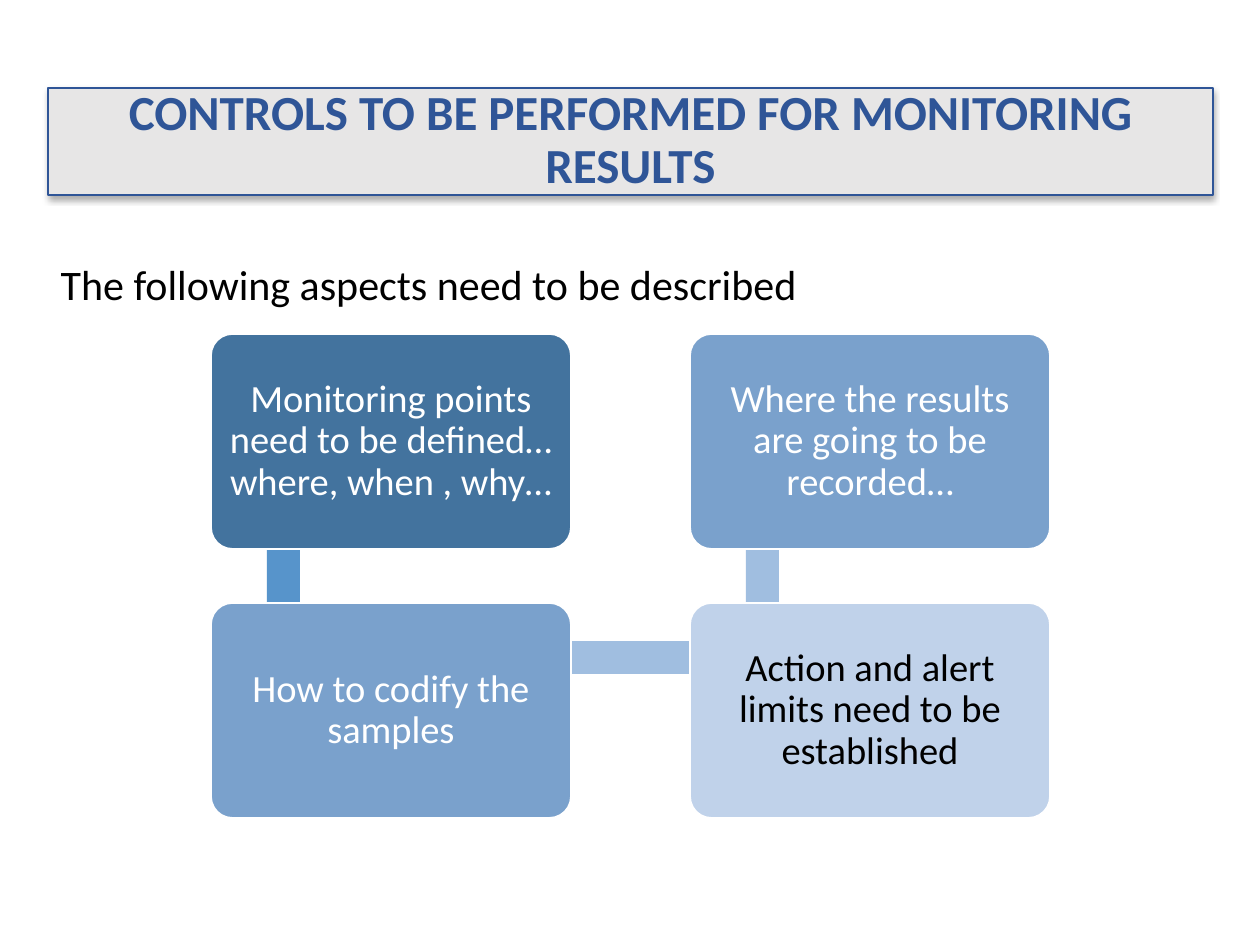
from dataclasses import dataclass

from lxml import etree
from pptx import Presentation, util as u
from pptx.dml.color import RGBColor
from pptx.enum import shapes, text
from pptx.oxml import parse_xml
from pptx.oxml.ns import nsdecls, qn

SCALE = 914400 / 126


@dataclass(frozen=True)
class Theme:
    """Colours, font and type sizes of the slide."""
    font: str = "Calibri"
    title_size: int = 28
    lead_size: int = 24
    box_size: int = 22
    black: str = "000000"
    white: str = "FFFFFF"
    navy: str = "2F5597"
    grey: str = "E7E6E6"
    deep: str = "43739E"
    bright: str = "5794CB"
    medium: str = "7AA1CC"
    soft: str = "A0BEE0"
    pale: str = "C0D2EA"


THEME = Theme()
COLUMNS = (211, 690)
ROWS = (334, 603)
BOX_WIDTH, BOX_HEIGHT = 360, 215
BAR_THICKNESS = 33


def px(length):
    """Turn pixels into EMU."""
    return u.Emu(round(length * SCALE))


def place(shape, left, top, width, height):
    """Move and size a shape in pixels."""
    shape.left, shape.top, shape.width, shape.height = map(px, (left, top, width, height))


def paint(shape, fill, line=None):
    """Give a shape a solid fill and a thin outline or none."""
    shape.fill.solid()
    shape.fill.fore_color.rgb = RGBColor.from_string(fill)
    if line:
        shape.line.color.rgb = RGBColor.from_string(line)
        shape.line.width = u.Pt(1)
    else:
        shape.line.fill.background()


def write(shape, wording, *, size, color, bold=False, align=text.PP_ALIGN.CENTER,
          anchor=text.MSO_ANCHOR.MIDDLE, spacing=0.9):
    """Write one formatted paragraph into a shape."""
    frame = shape.text_frame
    frame.word_wrap = True
    frame.auto_size = text.MSO_AUTO_SIZE.NONE
    frame.vertical_anchor = anchor
    paragraph = frame.paragraphs[0]
    paragraph.text = wording
    paragraph.alignment = align
    paragraph.line_spacing = spacing
    paragraph.space_before = u.Pt(0)
    font = paragraph.runs[0].font
    font.name, font.size, font.bold = THEME.font, u.Pt(size), bold
    font.color.rgb = RGBColor.from_string(color)


def add_title(slide, wording):
    """Fill the title placeholder as a framed banner with a soft shadow."""
    title = slide.shapes.title
    place(title, 48, 88, 1165, 107)
    paint(title, THEME.grey, THEME.navy)
    write(title, wording, size=THEME.title_size, color=THEME.navy, bold=True)
    title.element.spPr.append(parse_xml(
        f'<a:effectLst {nsdecls("a")}><a:outerShdw blurRad="44450" dist="27940" dir="5400000">'
        '<a:srgbClr val="000000"><a:alpha val="32000"/></a:srgbClr>'
        '</a:outerShdw></a:effectLst>'))


def add_lead(slide, wording):
    """Fill the body placeholder with an unbulleted sentence."""
    body = slide.placeholders[1]
    place(body, 48, 227, 1086, 600)
    properties = body.text_frame.paragraphs[0]._p.get_or_add_pPr()
    properties.set("marL", "0")
    properties.set("indent", "0")
    etree.SubElement(properties, qn("a:buNone"))
    write(body, wording, size=THEME.lead_size, color=THEME.black,
          align=text.PP_ALIGN.LEFT, anchor=text.MSO_ANCHOR.TOP, spacing=1.5)


def add_bar(slide, left, top, width, height, fill):
    """Add a plain bar that links two boxes."""
    bar = slide.shapes.add_shape(shapes.MSO_SHAPE.RECTANGLE, 0, 0, 0, 0)
    place(bar, left, top, width, height)
    bar.shadow.inherit = False
    paint(bar, fill)


def add_box(slide, column, row, wording, fill, color):
    """Add a rounded box with centred text at a grid cell."""
    box = slide.shapes.add_shape(shapes.MSO_SHAPE.ROUNDED_RECTANGLE, 0, 0, 0, 0)
    place(box, COLUMNS[column], ROWS[row], BOX_WIDTH, BOX_HEIGHT)
    box.adjustments[0] = 0.1
    box.shadow.inherit = False
    paint(box, fill, THEME.white)
    frame = box.text_frame
    frame.margin_left = frame.margin_right = px(10)
    frame.margin_top = frame.margin_bottom = px(10)
    write(box, wording, size=THEME.box_size, color=color)


def main():
    """Build and save the slide."""
    presentation = Presentation()
    presentation.slide_width, presentation.slide_height = px(1260), px(945)
    slide = presentation.slides.add_slide(presentation.slide_layouts[1])
    add_lead(slide, "The following aspects need to be described")
    add_title(slide, "CONTROLS TO BE PERFORMED FOR MONITORING RESULTS")

    for column, fill in zip(COLUMNS, (THEME.bright, THEME.soft)):
        add_bar(slide, column + 56, 389, BAR_THICKNESS, 268, fill)
    add_bar(slide, 285, 641, 476, BAR_THICKNESS, THEME.soft)

    boxes = (
        (0, 0, "Monitoring points need to be defined…where, when , why…", THEME.deep, THEME.white),
        (0, 1, "How to codify the samples", THEME.medium, THEME.white),
        (1, 1, "Action and alert limits need to be established", THEME.pale, THEME.black),
        (1, 0, "Where the results are going to be recorded…", THEME.medium, THEME.white),
    )
    for box in boxes:
        add_box(slide, *box)
    presentation.save("out.pptx")


if __name__ == "__main__":
    main()
